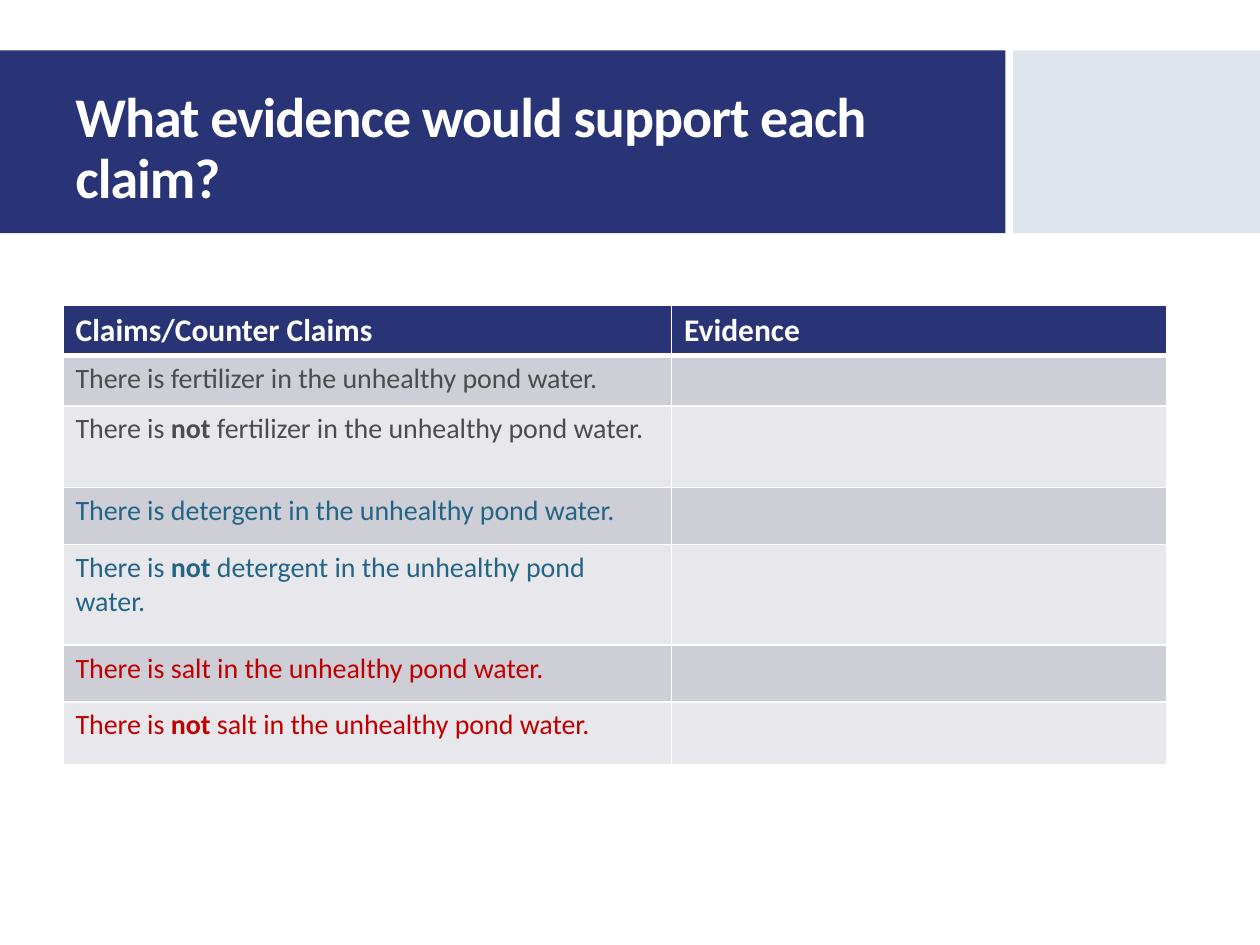
from lxml.etree import SubElement
from pptx import Presentation
from pptx.dml.color import RGBColor
from pptx.enum.shapes import MSO_SHAPE
from pptx.enum.text import MSO_ANCHOR
from pptx.oxml.ns import qn
from pptx.util import Inches, Pt

COLORS = {
    "navy": "293476",
    "pale": "DFE5ED",
    "white": "FFFFFF",
    "dark_band": "CDCED6",
    "light_band": "E8E8EC",
    "gray": "4C4C4C",
    "teal": "246587",
    "red": "C00000",
}
SUBSTANCES = [("fertilizer", "gray"), ("detergent", "teal"), ("salt", "red")]
COLUMN_WIDTHS = [4.83, 3.93]
ROW_HEIGHTS = [0.4, 0.38, 0.65, 0.45, 0.8, 0.45, 0.5]


def rgb(name):
    return RGBColor.from_string(COLORS[name])


def write(paragraph, text, *, size, color, bold=False, spacing=None):
    """Append a run; spacing is the letter spacing in points."""
    run = paragraph.add_run()
    run.text = text
    font = run.font
    font.name, font.size, font.bold = "Calibri", Pt(size), bold
    font.color.rgb = rgb(color)
    if spacing is not None:
        run._r.get_or_add_rPr().set("spc", str(round(spacing * 100)))


def add_band(slide, left, width, color):
    band = slide.shapes.add_shape(
        MSO_SHAPE.RECTANGLE, Inches(left), Inches(0.4), Inches(width), Inches(1.45)
    )
    band.shadow.inherit = False
    band.fill.solid()
    band.fill.fore_color.rgb = rgb(color)
    band.line.fill.background()


def add_title(slide, text):
    title = slide.shapes.add_textbox(
        Inches(0.5), Inches(0.58), Inches(6.93), Inches(1.22)
    )
    frame = title.text_frame
    frame.word_wrap = True
    frame.vertical_anchor = MSO_ANCHOR.MIDDLE
    paragraph = frame.paragraphs[0]
    paragraph.line_spacing = 0.9
    write(paragraph, text, size=32, color="white", bold=True, spacing=-0.6)


def style_cell(cell, fill, top=1, bottom=1):
    """Give a cell white borders (widths in points) and a solid fill."""
    properties = cell._tc.get_or_add_tcPr()
    for side, width in (("L", 1), ("R", 1), ("T", top), ("B", bottom)):
        border = SubElement(properties, qn(f"a:ln{side}"), w=str(Pt(width)))
        line_fill = SubElement(border, qn("a:solidFill"))
        SubElement(line_fill, qn("a:srgbClr"), val=COLORS["white"])
    cell.fill.solid()
    cell.fill.fore_color.rgb = rgb(fill)


def write_claim(cell, substance, color, negated):
    paragraph = cell.text_frame.paragraphs[0]
    write(paragraph, "There is ", size=16, color=color)
    if negated:
        write(paragraph, "not ", size=16, color=color, bold=True)
    write(paragraph, f"{substance} in the unhealthy pond water.", size=16, color=color)


def add_claims_table(slide):
    table = slide.shapes.add_table(
        len(ROW_HEIGHTS), len(COLUMN_WIDTHS), Inches(0.5), Inches(2.42),
        Inches(sum(COLUMN_WIDTHS)), Inches(sum(ROW_HEIGHTS)),
    ).table
    for column, width in zip(table.columns, COLUMN_WIDTHS):
        column.width = Inches(width)
    for row, height in zip(table.rows, ROW_HEIGHTS):
        row.height = Inches(height)

    for column, heading in enumerate(["Claims/Counter Claims", "Evidence"]):
        cell = table.cell(0, column)
        style_cell(cell, "navy", bottom=3)
        write(cell.text_frame.paragraphs[0], heading, size=18, color="white", bold=True)

    claims = [(*item, negated) for item in SUBSTANCES for negated in (False, True)]
    for row, (substance, color, negated) in enumerate(claims, start=1):
        for column in range(len(COLUMN_WIDTHS)):
            style_cell(
                table.cell(row, column),
                "light_band" if negated else "dark_band",
                top=3 if row == 1 else 1,
            )
        write_claim(table.cell(row, 0), substance, color, negated)


def main():
    deck = Presentation()
    deck.slide_width, deck.slide_height = Inches(10), Inches(7.5)
    slide = deck.slides.add_slide(deck.slide_layouts[6])
    add_band(slide, 0, 7.98, "navy")
    add_band(slide, 8.04, 1.96, "pale")
    add_title(slide, "What evidence would support each claim?")
    add_claims_table(slide)
    deck.save("out.pptx")


if __name__ == "__main__":
    main()
